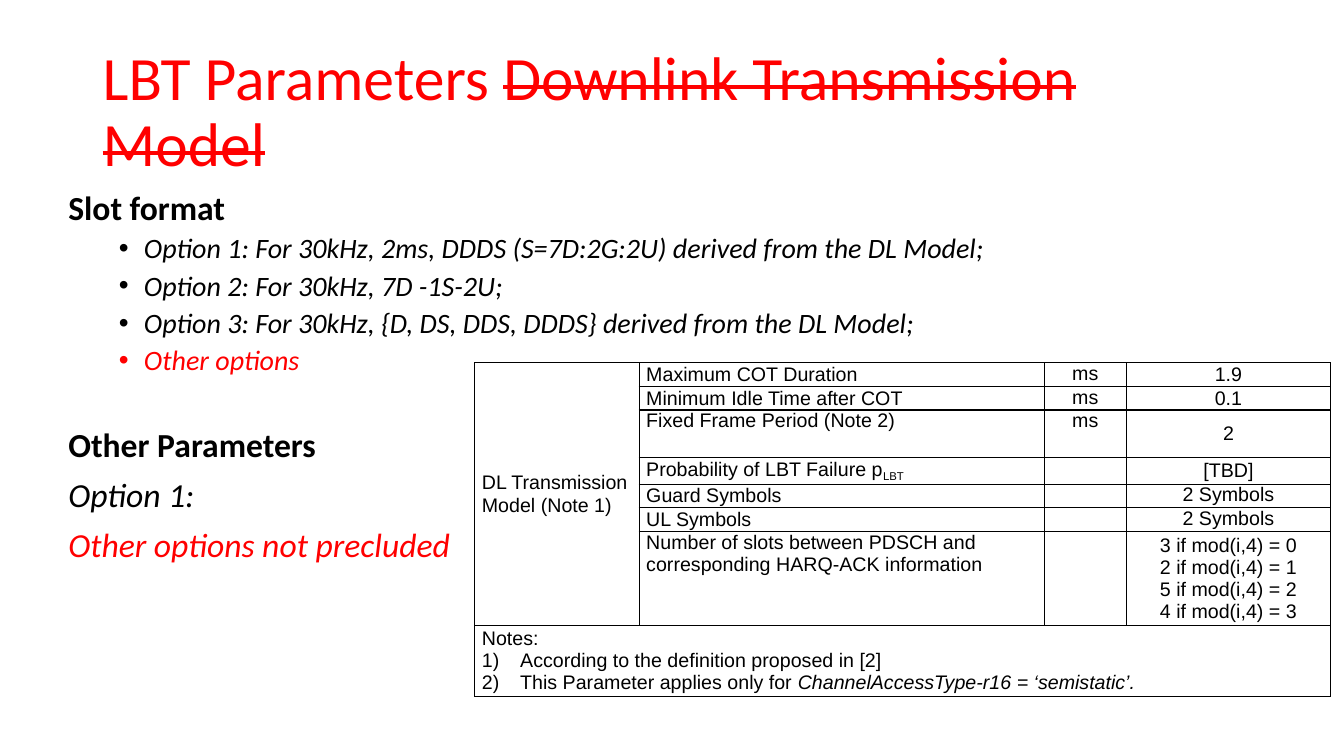
from lxml import etree
from pptx import Presentation
from pptx.dml.color import RGBColor
from pptx.enum.text import MSO_ANCHOR, PP_ALIGN
from pptx.oxml.ns import qn
from pptx.util import Inches, Pt

TOP, MIDDLE = MSO_ANCHOR.TOP, MSO_ANCHOR.MIDDLE
LEFT, CENTER = PP_ALIGN.LEFT, PP_ALIGN.CENTER

COLORS = {"text": "000000", "change": "FF0000", "border": "000000"}
COLUMN_WIDTHS = (1.63, 4.02, 0.81, 2.03)
CELL_SIZE = 14

SLOT_OPTIONS = (
    ("Option 1: For 30kHz, 2ms, DDDS (S=7D:2G:2U) derived from the DL Model;", "text"),
    ("Option 2: For 30kHz, 7D -1S-2U;", "text"),
    ("Option 3: For 30kHz, {D, DS, DDS, DDDS} derived from the DL Model;", "text"),
    ("Other options", "change"),
)
SLOT_VALUES = "\v".join(
    f"{slots} if mod(i,4) = {index}" for index, slots in enumerate((3, 2, 5, 4))
)
# height, parameter, subscript, unit, value, parameter anchor, value anchor
PARAMETER_ROWS = (
    (0.22, "Maximum COT Duration", "", "ms", "1.9", MIDDLE, MIDDLE),
    (0.22, "Minimum Idle Time after COT", "", "ms", "0.1", MIDDLE, MIDDLE),
    (0.47, "Fixed Frame Period (Note 2)", "", "ms", "2", TOP, MIDDLE),
    (0.25, "Probability of LBT Failure p", "LBT", "", "[TBD]", MIDDLE, MIDDLE),
    (0.22, "Guard Symbols", "", "", "2 Symbols", MIDDLE, TOP),
    (0.22, "UL Symbols", "", "", "2 Symbols", MIDDLE, TOP),
    (0.88, "Number of slots between PDSCH and corresponding HARQ-ACK information",
     "", "", SLOT_VALUES, TOP, MIDDLE),
)
NOTES_HEIGHT = 0.66


def add_text(para, text, font="Calibri", size=24, color="text", bold=False,
             italic=False, strike=False, baseline=0):
    """Add text to a paragraph; a vertical tab breaks the line."""
    for index, line in enumerate(text.split("\v")):
        if index:
            para.add_line_break()
        span = para.add_run()
        span.text = line
        span.font.name = font
        span.font.size = Pt(size)
        span.font.bold = bold
        span.font.italic = italic
        span.font.color.rgb = RGBColor.from_string(COLORS[color])
        properties = span._r.get_or_add_rPr()
        if strike:
            properties.set("strike", "sngStrike")
        if baseline:
            properties.set("baseline", str(baseline * 1000))


def add_cell_text(para, text, **style):
    add_text(para, text, font="Arial", size=CELL_SIZE, **style)


def add_box(page, left, top, width, height, anchor=TOP):
    box = page.shapes.add_textbox(*map(Inches, (left, top, width, height)))
    frame = box.text_frame
    frame.word_wrap = True
    frame.vertical_anchor = anchor
    return frame


def next_para(frame, before=0, spacing=None):
    """Return the unused first paragraph, or a new one."""
    first = frame.paragraphs[0]
    para = frame.add_paragraph() if first.runs else first
    para.space_before = Pt(before)
    if spacing:
        para.line_spacing = spacing
    return para


def set_bullet(para, indent, hanging, tag, **attributes):
    properties = para._p.get_or_add_pPr()
    properties.set("marL", str(Inches(indent)))
    properties.set("indent", str(-Inches(hanging)))
    etree.SubElement(properties, qn("a:buFont"), typeface="Arial")
    etree.SubElement(properties, qn(tag), **attributes)


def format_cell(cell, anchor=MIDDLE):
    cell.margin_left = cell.margin_right = Inches(0.07)
    cell.margin_top = cell.margin_bottom = 0
    cell.vertical_anchor = anchor
    properties = cell._tc.get_or_add_tcPr()
    for side in ("a:lnL", "a:lnR", "a:lnT", "a:lnB"):
        line = etree.SubElement(properties, qn(side), w=str(Pt(1)))
        fill = etree.SubElement(line, qn("a:solidFill"))
        etree.SubElement(fill, qn("a:srgbClr"), val=COLORS["border"])
    cell.fill.background()


def fill_cell(cell, text, align=LEFT, anchor=MIDDLE, subscript=""):
    cell.vertical_anchor = anchor
    para = cell.text_frame.paragraphs[0]
    para.alignment = align
    if text:
        add_cell_text(para, text)
    else:
        # Keeps an empty cell from stretching its row
        etree.SubElement(para._p, qn("a:endParaRPr"), sz=str(CELL_SIZE * 100))
    if subscript:
        add_cell_text(para, subscript, baseline=-25)


def add_title(page):
    frame = add_box(page, 0.92, 0.4, 11.5, 1.45, anchor=MIDDLE)
    para = next_para(frame, spacing=0.9)
    add_text(para, "LBT Parameters ", size=44, color="change")
    add_text(para, "Downlink Transmission Model", size=44, color="change", strike=True)


def add_body(page):
    frame = add_box(page, 0.58, 1.85, 11.83, 4.76)
    add_text(next_para(frame, 10, 0.9), "Slot format", bold=True)
    for text, color in SLOT_OPTIONS:
        para = next_para(frame, 5, 0.9)
        para.level = 1
        set_bullet(para, 0.75, 0.25, "a:buChar", char="•")
        add_text(para, text, size=20, color=color, italic=True)
    add_text(next_para(frame, 37, 0.9), "Other Parameters", bold=True)
    add_text(next_para(frame, 10, 0.9), "Option 1:", italic=True)
    add_text(next_para(frame, 10, 0.9), "Other options not precluded",
             color="change", italic=True)


def add_notes_row(cell):
    frame = cell.text_frame
    add_cell_text(next_para(frame), "Notes:")
    for text, emphasis in (
        ("According to the definition proposed in [2]", ""),
        ("This Parameter applies only for ", "ChannelAccessType-r16 = ‘semistatic’."),
    ):
        para = next_para(frame)
        set_bullet(para, 0.38, 0.38, "a:buAutoNum", type="arabicParenR")
        add_cell_text(para, text)
        if emphasis:
            add_cell_text(para, emphasis, italic=True)


def add_parameter_table(page):
    heights = [row[0] for row in PARAMETER_ROWS] + [NOTES_HEIGHT]
    last = len(PARAMETER_ROWS)
    table = page.shapes.add_table(
        len(heights), len(COLUMN_WIDTHS), Inches(4.71), Inches(3.6),
        Inches(sum(COLUMN_WIDTHS)), Inches(sum(heights)),
    ).table
    table.first_row = table.horz_banding = False
    for column, width in zip(table.columns, COLUMN_WIDTHS):
        column.width = Inches(width)
    for row, height in zip(table.rows, heights):
        row.height = Inches(height)
    for cell in table.iter_cells():
        format_cell(cell)

    table.cell(0, 0).merge(table.cell(last - 1, 0))
    table.cell(last, 0).merge(table.cell(last, len(COLUMN_WIDTHS) - 1))
    fill_cell(table.cell(0, 0), "DL Transmission Model (Note 1)")
    for index, row in enumerate(PARAMETER_ROWS):
        _, name, subscript, unit, value, name_anchor, value_anchor = row
        fill_cell(table.cell(index, 1), name, anchor=name_anchor, subscript=subscript)
        fill_cell(table.cell(index, 2), unit, CENTER, TOP)
        fill_cell(table.cell(index, 3), value, CENTER, value_anchor)
    add_notes_row(table.cell(last, 0))


def main():
    deck = Presentation()
    deck.slide_width, deck.slide_height = Inches(13.33), Inches(7.5)
    page = deck.slides.add_slide(deck.slide_layouts[6])
    add_title(page)
    add_body(page)
    add_parameter_table(page)
    deck.save("out.pptx")


if __name__ == "__main__":
    main()
